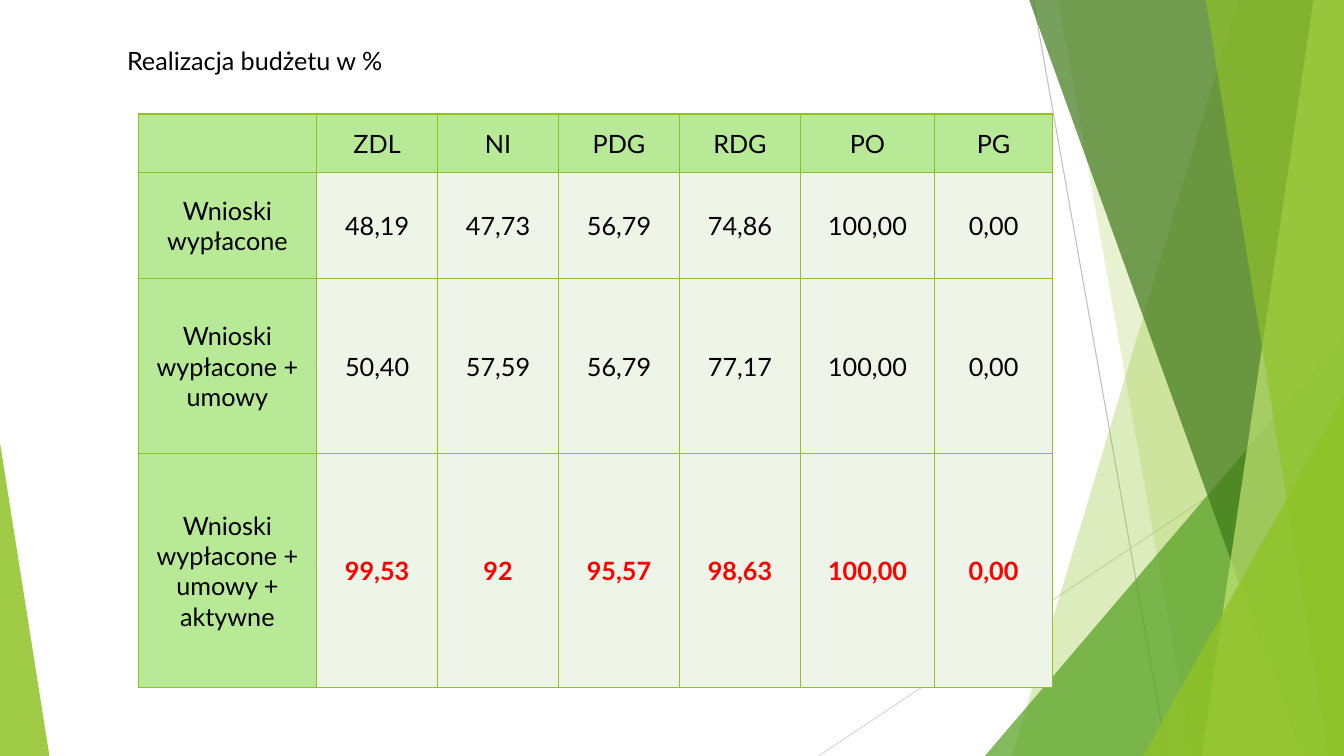
"""Builds the slide on budget execution in percent, framed by green facets."""
from dataclasses import dataclass

import pptx
import pptx.dml.color
import pptx.enum.shapes
import pptx.enum.text
import pptx.oxml
import pptx.oxml.ns
import pptx.util
from lxml import etree

RGBColor = pptx.dml.color.RGBColor
qn = pptx.oxml.ns.qn

BLACK = RGBColor(0x00, 0x00, 0x00)
RED = RGBColor(0xFF, 0x00, 0x00)
GREY = RGBColor(0xBF, 0xBF, 0xBF)
PALE_GREY = RGBColor(0xD9, 0xD9, 0xD9)
LIME = RGBColor(0x90, 0xC2, 0x26)
PALE_LIME = RGBColor(0xC0, 0xE4, 0x74)
GREEN = RGBColor(0x54, 0xA0, 0x21)
DARK_GREEN = RGBColor(0x3F, 0x78, 0x19)
HEADER_GREEN = RGBColor(0xB7, 0xE9, 0x96)
VALUE_GREEN = RGBColor(0xEE, 0xF4, 0xE8)

FONT = "Lato"
TEXT_SIZE = pptx.util.Pt(18)
SLIDE_WIDTH = pptx.util.Inches(13.33)
SLIDE_HEIGHT = pptx.util.Inches(7.5)

COLUMN_SHARES = (13.28, 9, 9, 9, 9, 9.98, 8.78)
ROW_SHARES = (7.73, 14, 23.2, 30.93)
BUDGET = (
    ("", "ZDL", "NI", "PDG", "RDG", "PO", "PG"),
    ("Wnioski wypłacone", "48,19", "47,73", "56,79", "74,86", "100,00", "0,00"),
    ("Wnioski wypłacone + umowy", "50,40", "57,59", "56,79", "77,17", "100,00", "0,00"),
    ("Wnioski wypłacone + umowy + aktywne", "99,53", "92", "95,57", "98,63", "100,00", "0,00"),
)


@dataclass(frozen=True)
class Ray:
    """A thin line between two points given in percent of the slide."""
    start: tuple[float, float]
    end: tuple[float, float]
    color: RGBColor


@dataclass(frozen=True)
class Band:
    """A full-height facet from a slanted left edge to the right slide edge."""
    top_x: float
    bottom_x: float
    color: RGBColor
    opacity: int


@dataclass(frozen=True)
class Corner:
    """A right triangle standing on the bottom edge of the slide."""
    left: float
    top: float
    width: float
    apex: float
    color: RGBColor
    opacity: int


RAYS = (
    Ray((76.88, 0), (86.85, 100), GREY),
    Ray((100, 53.73), (60.9, 100), PALE_GREY),
)
FACETS = (
    Band(92.1, 75.3, LIME, 30),
    Band(78.75, 88.73, LIME, 20),
    Corner(73.28, 44.4, 26.72, 1, GREEN, 72),
    Band(76.58, 96.83, DARK_GREEN, 70),
    Band(97.73, 89.4, PALE_LIME, 70),
    Band(89.7, 98.85, LIME, 65),
    Corner(85.05, 52.4, 14.95, 1, LIME, 80),
    Corner(0, 58.53, 3.68, 0, LIME, 85),
)


def across(share: float) -> pptx.util.Emu:
    """Turn a percentage of the slide width into a length."""
    return pptx.util.Emu(round(SLIDE_WIDTH * share / 100))


def down(share: float) -> pptx.util.Emu:
    """Turn a percentage of the slide height into a length."""
    return pptx.util.Emu(round(SLIDE_HEIGHT * share / 100))


def draw_ray(slide: pptx.slide.Slide, ray: Ray) -> None:
    """Draw one thin line without a shadow."""
    line = slide.shapes.add_connector(
        pptx.enum.shapes.MSO_CONNECTOR.STRAIGHT,
        across(ray.start[0]), down(ray.start[1]), across(ray.end[0]), down(ray.end[1]))
    line.line.color.rgb = ray.color
    line.line.width = pptx.util.Pt(0.75)
    etree.SubElement(line.element.spPr, qn("a:effectLst"))


def draw_facet(slide: pptx.slide.Slide, facet: Band | Corner) -> None:
    """Draw one translucent facet."""
    if isinstance(facet, Band):
        outline = slide.shapes.build_freeform(across(facet.top_x), 0)
        outline.add_line_segments([
            (SLIDE_WIDTH, 0), (SLIDE_WIDTH, SLIDE_HEIGHT), (across(facet.bottom_x), SLIDE_HEIGHT)])
        shape = outline.convert_to_shape()
    else:
        shape = slide.shapes.add_shape(
            pptx.enum.shapes.MSO_SHAPE.ISOSCELES_TRIANGLE, across(facet.left),
            down(facet.top), across(facet.width), down(100 - facet.top))
        shape.adjustments[0] = facet.apex
    shape.shadow.inherit = False
    shape.line.fill.background()
    shape.fill.solid()
    shape.fill.fore_color.rgb = facet.color
    color = shape.element.spPr.find(qn("a:solidFill"))[0]
    etree.SubElement(color, qn("a:alpha"), val=str(facet.opacity * 1000))


def format_text(frame: pptx.text.text.TextFrame, color: RGBColor, bold: bool,
                alignment: pptx.enum.text.PP_ALIGN) -> None:
    """Give every run of a text frame the slide's type."""
    for paragraph in frame.paragraphs:
        paragraph.alignment = alignment
        for run in paragraph.runs:
            run.font.name = FONT
            run.font.size = TEXT_SIZE
            run.font.bold = bold
            run.font.color.rgb = color


def add_borders(cell: pptx.table._Cell) -> None:
    """Outline all four sides of a cell in lime."""
    properties = cell._tc.get_or_add_tcPr()
    for side in ("a:lnL", "a:lnR", "a:lnT", "a:lnB"):
        border = etree.SubElement(properties, qn(side), w=str(pptx.util.Pt(1)))
        fill = etree.SubElement(border, qn("a:solidFill"))
        etree.SubElement(fill, qn("a:srgbClr"), val=str(LIME))


def draw_budget(slide: pptx.slide.Slide) -> None:
    """Draw the budget table with its last row of values emphasised."""
    table = slide.shapes.add_table(
        len(ROW_SHARES), len(COLUMN_SHARES), across(10.28), down(15.07),
        across(sum(COLUMN_SHARES)), down(sum(ROW_SHARES))).table
    table.first_row = False
    table.horz_banding = False
    for column, share in zip(table.columns, COLUMN_SHARES):
        column.width = across(share)
    for row, share in zip(table.rows, ROW_SHARES):
        row.height = down(share)
    for r, values in enumerate(BUDGET):
        for c, value in enumerate(values):
            cell = table.cell(r, c)
            cell.margin_left = cell.margin_right = cell.margin_top = pptx.util.Inches(0.01)
            cell.margin_bottom = 0
            cell.vertical_anchor = pptx.enum.text.MSO_ANCHOR.MIDDLE
            add_borders(cell)
            cell.fill.solid()
            cell.fill.fore_color.rgb = VALUE_GREEN if r and c else HEADER_GREEN
            cell.text_frame.text = value
            total = r == len(BUDGET) - 1 and c > 0
            format_text(cell.text_frame, RED if total else BLACK, total,
                        pptx.enum.text.PP_ALIGN.CENTER)


def draw_title(slide: pptx.slide.Slide) -> None:
    """Place the heading above the table."""
    title = slide.shapes.title
    title.left, title.top = across(8.7), down(5.33)
    title.width, title.height = across(69.4), down(5.33)
    frame = title.text_frame
    frame.text = "Realizacja budżetu w %"
    frame.word_wrap = True
    frame.auto_size = pptx.enum.text.MSO_AUTO_SIZE.NONE
    frame.vertical_anchor = pptx.enum.text.MSO_ANCHOR.MIDDLE
    format_text(frame, BLACK, False, pptx.enum.text.PP_ALIGN.LEFT)


def main() -> None:
    """Build and save the presentation."""
    presentation = pptx.Presentation()
    presentation.slide_width = SLIDE_WIDTH
    presentation.slide_height = SLIDE_HEIGHT
    slide = presentation.slides.add_slide(presentation.slide_layouts[5])
    for ray in RAYS:
        draw_ray(slide, ray)
    for facet in FACETS:
        draw_facet(slide, facet)
    draw_budget(slide)
    draw_title(slide)
    presentation.save("out.pptx")


if __name__ == "__main__":
    main()
